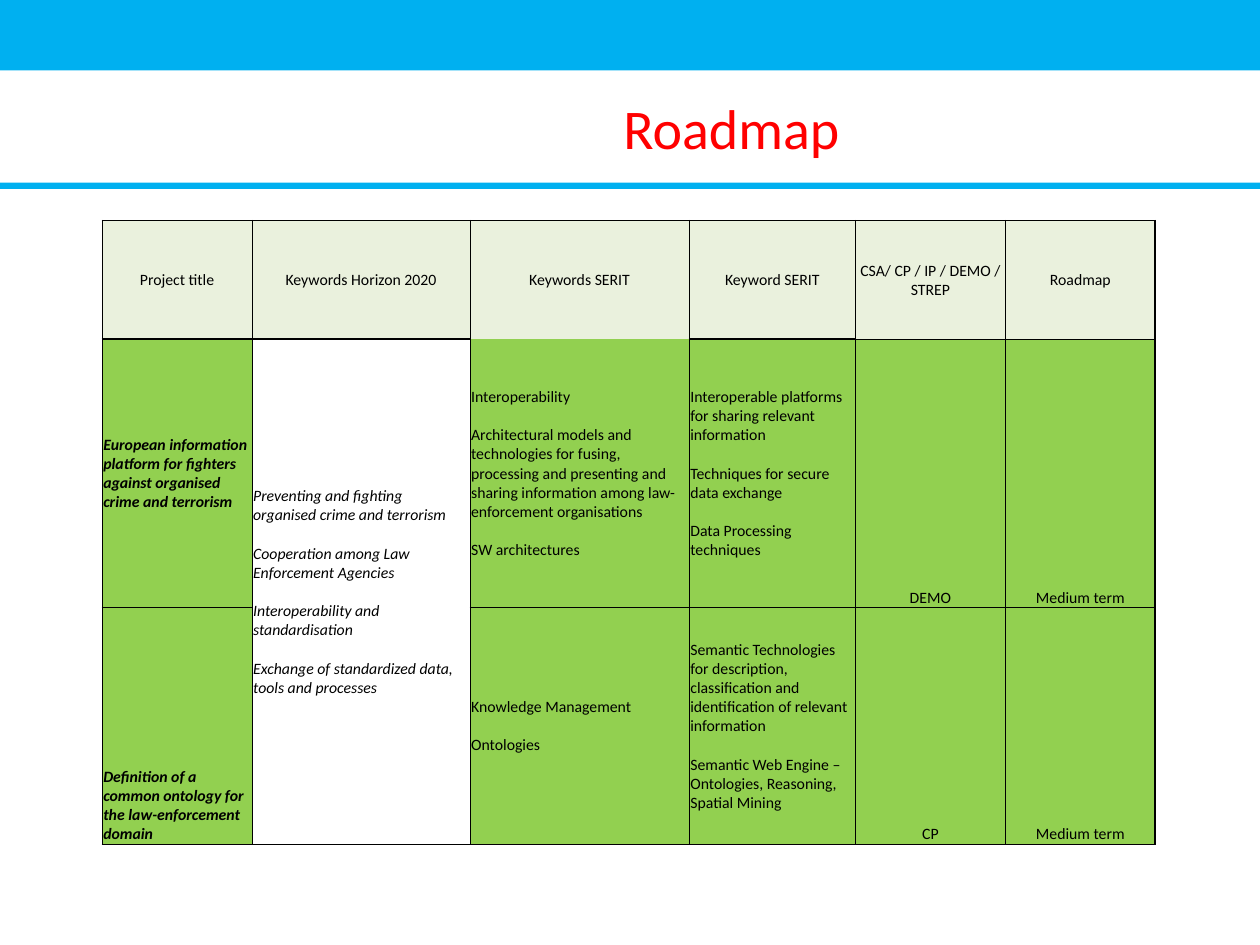
"""Build the roadmap slide with its project table."""
from lxml.etree import SubElement
from pptx import Presentation
from pptx.dml.color import RGBColor as Rgb
from pptx.enum.shapes import MSO_SHAPE as Shape
from pptx.enum.text import MSO_ANCHOR as Anchor, PP_ALIGN as Align
from pptx.oxml.ns import qn
from pptx.util import Inches, Pt

HUES = {"bar": "00B0F0", "title": "FF0000", "text": "000000",
        "head": "EAF1DD", "green": "92D050"}
FONT = "Calibri"
BARS = [(0, 0.56), (1.45, 0.05)]
COLS = [1.19, 1.73, 1.74, 1.32, 1.19, 1.19]
ROWS = [0.94, 2.13, 1.88]
TITLE = "Roadmap"
GRID = [
    [["Project title"], ["Keywords Horizon 2020"], ["Keywords SERIT"],
     ["Keyword SERIT"], ["CSA/ CP / IP / DEMO / STREP"], ["Roadmap"]],
    [["European information platform for fighters against organised "
      "crime and terrorism"],
     ["Preventing and fighting organised crime and terrorism",
      "Cooperation among Law Enforcement Agencies",
      "Interoperability and standardisation",
      "Exchange of standardized data, tools and processes"],
     ["Interoperability",
      "Architectural models and technologies for fusing, processing and "
      "presenting and sharing information among law-enforcement organisations",
      "SW architectures"],
     ["Interoperable platforms for sharing relevant information",
      "Techniques for secure data exchange",
      "Data Processing techniques"],
     ["DEMO"], ["Medium term"]],
    [["Definition of a common ontology for the law-enforcement domain"],
     [],
     ["Knowledge Management", "Ontologies"],
     ["Semantic Technologies for description, classification and "
      "identification of relevant information",
      "Semantic Web Engine – Ontologies, Reasoning, Spatial Mining"],
     ["CP"], ["Medium term"]],
]


def hue(name):
    return Rgb.from_string(HUES[name])


def style(run, size, name, bold=False, slant=False):
    font = run.font
    font.name, font.size = FONT, Pt(size)
    font.bold, font.italic = bold, slant
    font.color.rgb = hue(name)


def edge(cell, side, width):
    line = SubElement(cell._tc.get_or_add_tcPr(), qn(f"a:ln{side}"),
                      w=str(Pt(width)))
    if width:
        fill = SubElement(line, qn("a:solidFill"))
        SubElement(fill, qn("a:srgbClr"), val=HUES["text"])
    else:
        SubElement(line, qn("a:noFill"))


def seam(row, col):
    if row == 0:
        return 1
    if row == 1:
        return 0 if col == 2 else 1 if col < 4 else 0.5
    return 0.5


def border(cell, row, col):
    edge(cell, "L", 0.5)
    edge(cell, "R", 1 if col == len(COLS) - 1 else 0.5)
    edge(cell, "T", seam(row, col))
    edge(cell, "B", seam(row + 1, col))


def write(cell, row, col, items):
    frame = cell.text_frame
    frame.text = "\n".join(items)
    for i, para in enumerate(frame.paragraphs):
        if i:
            para.space_before = Pt(11)
        mid = row == 0 or col > 3
        para.alignment = Align.CENTER if mid else Align.LEFT
        for run in para.runs:
            style(run, 9, "text", row > 0 and col == 0, row > 0 and col < 2)


def add_grid(slide):
    table = slide.shapes.add_table(
        len(ROWS), len(COLS), Inches(0.81), Inches(1.75),
        Inches(sum(COLS)), Inches(sum(ROWS))).table
    table.first_row = table.horz_banding = False
    for part, size in zip(table.columns, COLS):
        part.width = Inches(size)
    for part, size in zip(table.rows, ROWS):
        part.height = Inches(size)
    for row, line in enumerate(GRID):
        for col, items in enumerate(line):
            cell = table.cell(row, col)
            cell.margin_left = cell.margin_right = Inches(0.01)
            cell.margin_top, cell.margin_bottom = Inches(0.01), 0
            low = row and (col > 3 or (row == 2 and col == 0))
            cell.vertical_anchor = Anchor.BOTTOM if low else Anchor.MIDDLE
            border(cell, row, col)
            if row and col == 1:
                cell.fill.background()
            else:
                cell.fill.solid()
                cell.fill.fore_color.rgb = hue("green" if row else "head")
            if items:
                write(cell, row, col, items)
    table.cell(1, 1).merge(table.cell(2, 1))


def main():
    deck = Presentation()
    deck.slide_width, deck.slide_height = Inches(10), Inches(7.5)
    slide = deck.slides.add_slide(deck.slide_layouts[5])
    for top, tall in BARS:
        bar = slide.shapes.add_shape(Shape.RECTANGLE, 0, Inches(top),
                                     deck.slide_width, Inches(tall))
        bar.shadow.inherit = False
        bar.fill.solid()
        bar.fill.fore_color.rgb = hue("bar")
        bar.line.fill.background()
    title = slide.shapes.title
    title.left, title.top = Inches(1.81), Inches(0.57)
    title.width, title.height = Inches(7.99), Inches(0.87)
    frame = title.text_frame
    frame.text = TITLE
    frame.vertical_anchor = Anchor.MIDDLE
    frame.paragraphs[0].alignment = Align.CENTER
    style(frame.paragraphs[0].runs[0], 32, "title")
    add_grid(slide)
    deck.save("out.pptx")


if __name__ == "__main__":
    main()
